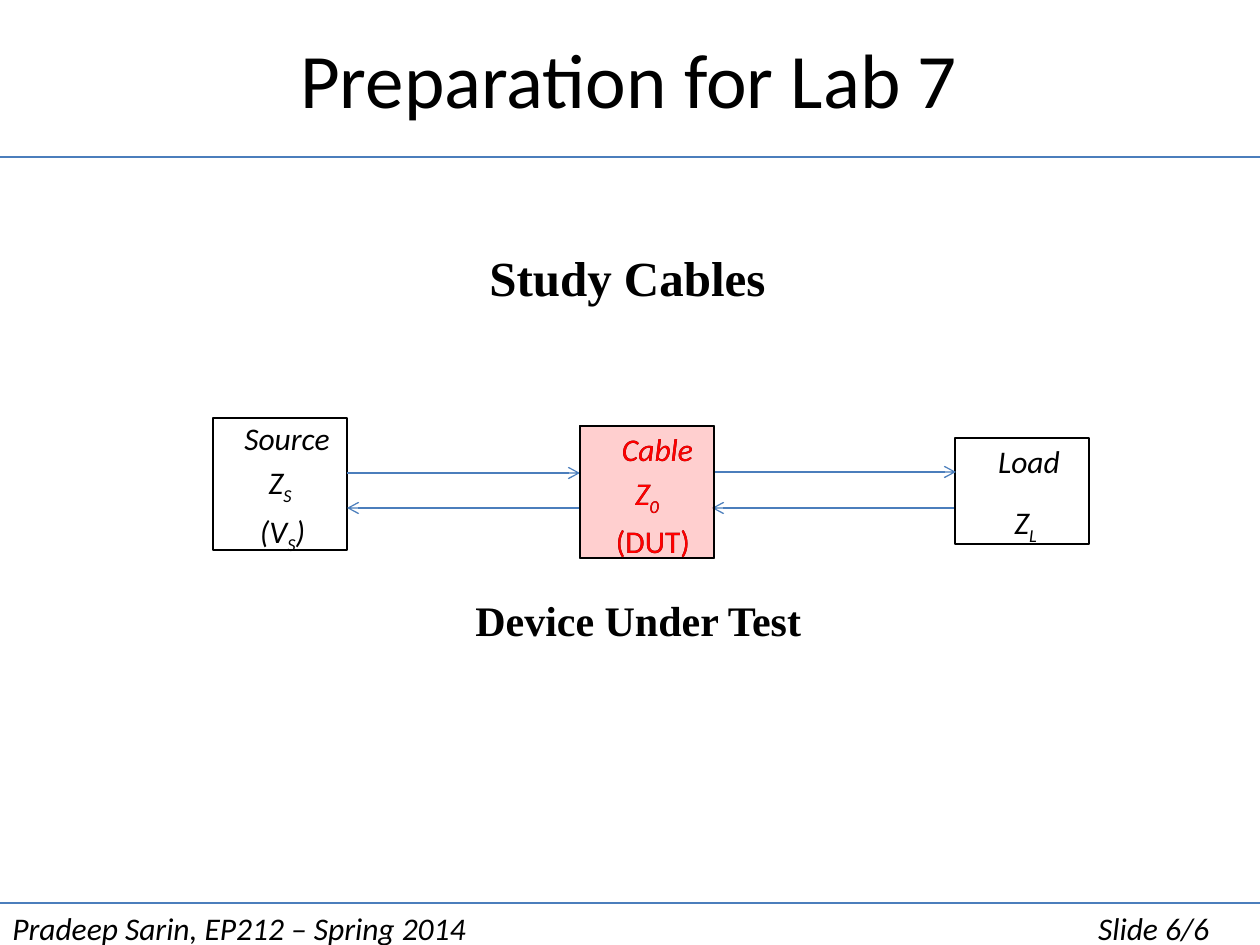
"""Build the lab preparation slide with its cable test diagram."""
from lxml.etree import SubElement
from pptx import Presentation
from pptx.dml.color import RGBColor
from pptx.enum.shapes import MSO_CONNECTOR, MSO_SHAPE
from pptx.enum.text import MSO_ANCHOR, MSO_AUTO_SIZE, PP_ALIGN
from pptx.oxml.ns import qn
from pptx.util import Emu, Pt

BLACK, WHITE, RED, BLUE = "000000", "FFFFFF", "FF0000", "4B7EBC"
SANS, SERIF = "Calibri", "Times New Roman"
SOURCE = [(14, [("Source", "i")]), (0, [("Z", "i"), ("S", "is")]),
          (5, [("(V", "i"), ("S", "is"), (")", "i")])]
CABLE = [(21, [("Cable", "i")]), (0, [("Z", "i"), ("0", "is")]), (12, [("(DUT)", "")])]
LOAD = [(14, [("Load", "i")]), (7, [("Z", "i"), ("L", "is")])]


def px(n):
    """Turn pixels into EMU."""
    return Emu(round(n * 914400 / 126))


def rgb(value):
    """Turn a hex string into a colour."""
    return RGBColor.from_string(value)


def add_run(p, text, size, font=SANS, color=BLACK, style=""):
    """Add a run; style letters are b bold, i italic, s subscript."""
    r = p.add_run()
    r.text = text
    r.font.size, r.font.name = Pt(size), font
    r.font.bold, r.font.italic = "b" in style, "i" in style
    r.font.color.rgb = rgb(color)
    if "s" in style:
        r._r.get_or_add_rPr().set("baseline", "-25000")


def add_text(s, box, text, size, font, style, wrap=False):
    """Add a one-line text box and return its paragraph."""
    tf = s.shapes.add_textbox(*map(px, box)).text_frame
    tf.word_wrap, tf.auto_size = wrap, MSO_AUTO_SIZE.SHAPE_TO_FIT_TEXT
    p = tf.paragraphs[0]
    add_run(p, text, size, font, style=style)
    return p


def add_line(s, start, end, arrow=False):
    """Add a thin blue line, with an open arrowhead at its end if asked."""
    line = s.shapes.add_connector(MSO_CONNECTOR.STRAIGHT, *map(px, start + end))
    line.line.color.rgb, line.line.width = rgb(BLUE), Pt(0.75)
    if arrow:
        SubElement(line.line._get_or_add_ln(), qn("a:tailEnd"), type="arrow")
    SubElement(line._element.spPr, qn("a:effectLst"))


def add_block(s, box, lines, gap=0, fill=WHITE, color=BLACK, alpha=None):
    """Add a bordered block with centred lines, each with its own indent."""
    sp = s.shapes.add_shape(MSO_SHAPE.RECTANGLE, *map(px, box))
    sp.shadow.inherit = False
    sp.fill.solid()
    sp.fill.fore_color.rgb = rgb(fill)
    if alpha:
        clr = sp._element.spPr.find(qn("a:solidFill")).find(qn("a:srgbClr"))
        SubElement(clr, qn("a:alpha"), val=str(alpha * 1000))
    sp.line.color.rgb, sp.line.width = rgb(BLACK), Pt(0.75)
    tf = sp.text_frame
    tf.margin_left = tf.margin_right = tf.margin_top = tf.margin_bottom = 0
    tf.word_wrap, tf.auto_size = True, MSO_AUTO_SIZE.SHAPE_TO_FIT_TEXT
    tf.vertical_anchor = MSO_ANCHOR.MIDDLE
    for i, (indent, runs) in enumerate(lines):
        p = tf.add_paragraph() if i else tf.paragraphs[0]
        p.alignment, p.line_spacing, p.space_after = PP_ALIGN.CENTER, 1.15, Pt(gap)
        p._p.get_or_add_pPr().set("marL", str(px(indent)))
        for text, style in runs:
            add_run(p, text, 18, color=color, style=style)


def set_title(s, text):
    """Place and format the title."""
    title = s.shapes.title
    title.left, title.top, title.width, title.height = map(px, (-1, -24, 1260, 203))
    tf = title.text_frame
    tf.vertical_anchor = MSO_ANCHOR.MIDDLE
    p = tf.paragraphs[0]
    p.alignment = PP_ALIGN.CENTER
    add_run(p, text, 44)


def add_footer(s):
    """Add the footer rule and its text with a right tab."""
    add_line(s, (0, 903), (1260, 903))
    p = add_text(s, (0, 903, 1258, 50), "Pradeep Sarin, EP212 – Spring 2014", 18, SANS, "i", True)
    tabs = SubElement(p._p.get_or_add_pPr(), qn("a:tabLst"))
    SubElement(tabs, qn("a:tab"), pos=str(px(1197)), algn="r")
    add_run(p, "\tSlide 6/6", 18, style="i")


def add_diagram(s):
    """Add the source, cable and load blocks with arrows both ways."""
    cable_box = (580, 426, 134, 132)
    add_block(s, (213, 418, 134, 132), SOURCE)
    add_block(s, cable_box, CABLE)
    add_block(s, (955, 438, 134, 106), LOAD, gap=10)
    for x1, x2, y in ((347, 580, 473), (714, 956, 472), (580, 347, 508), (954, 712, 508)):
        add_line(s, (x1, y), (x2, y), arrow=True)
    add_block(s, cable_box, CABLE, fill=RED, color=RED, alpha=19)


def main():
    """Build and save the slide."""
    prs = Presentation()
    prs.slide_width, prs.slide_height = px(1260), px(945)
    s = prs.slides.add_slide(prs.slide_layouts[5])
    add_footer(s)
    set_title(s, "Preparation for Lab 7")
    for x in (0, -1):
        add_line(s, (x, 157), (x + 1260, 157))
    add_text(s, (477, 241, 305, 72), "Study Cables", 28, SERIF, "b")
    add_diagram(s)
    add_text(s, (463, 588, 354, 63), "Device Under Test", 24, SERIF, "b")
    prs.save("out.pptx")


if __name__ == "__main__":
    main()
